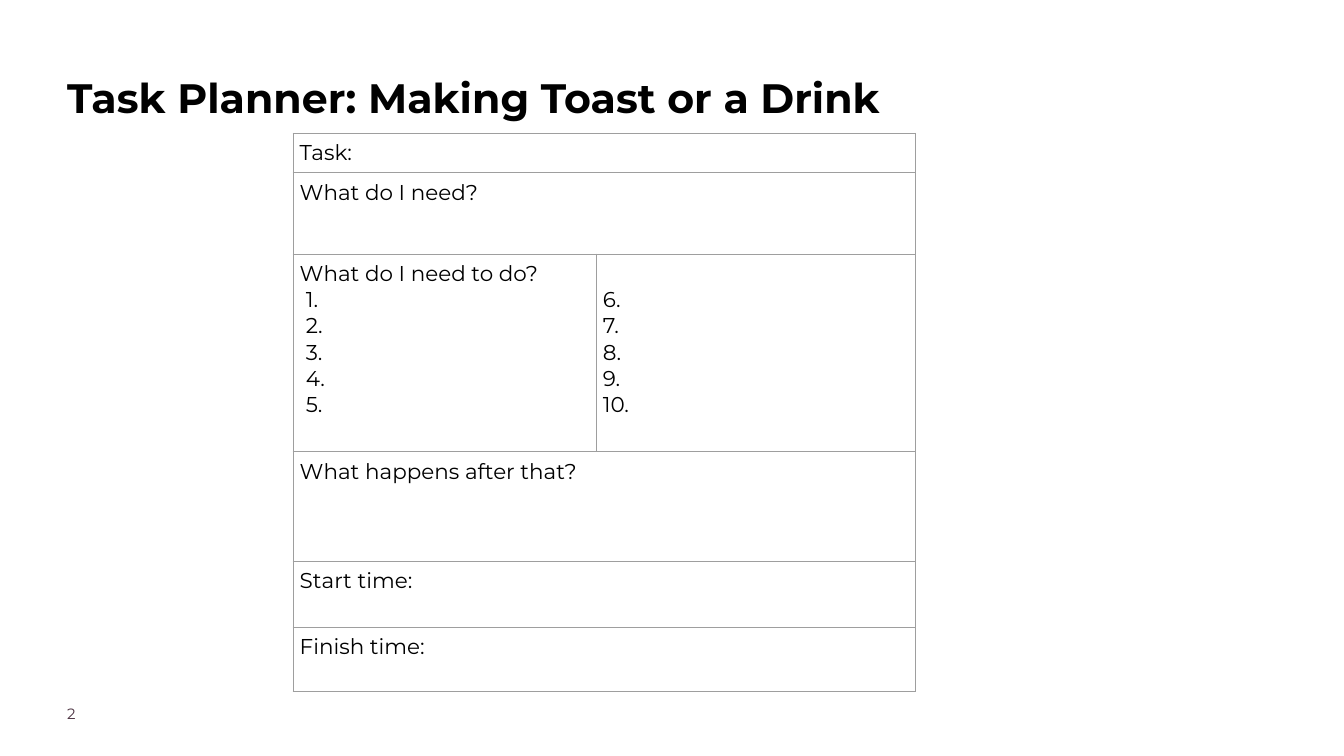
from lxml.etree import SubElement
from pptx import Presentation
from pptx.dml.color import RGBColor as RGB
from pptx.oxml import parse_xml
from pptx.oxml.ns import nsdecls, qn
from pptx.util import Inches as In, Pt

FONT = "Montserrat"
BLACK = RGB(0, 0, 0)
PLUM = RGB(0x4B, 0x32, 0x41)
GREY = RGB(0x9E, 0x9E, 0x9E)
W, H = 20, 11.25
MARGIN = W / 20
TABLE_LEFT, TABLE_TOP = 4.36, 1.98
COLS = [4.51, 4.75]
PAD, LINE, CELL_SIZE = 0.1, 0.39, 23

TITLE = "Task Planner: Making Toast or a Drink"
PAGE = "2"
ROWS = [
    (0.59, "Task:"),
    (1.21, "What do I need?"),
    (2.94, "What do I need to do?"),
    (1.63, "What happens after that?"),
    (0.98, "Start time:"),
    (0.96, "Finish time:"),
]
STEPS_ROW = 2
NUMBERED_STEPS = 5
MORE_STEPS = ["6.", "7.", "8.", "9.", "10."]


def add_run(p, text, size, color=BLACK, bold=False):
    r = p.add_run()
    r.text = text
    r.font.name, r.font.size, r.font.bold = FONT, Pt(size), bold
    r.font.color.rgb = color


def add_text(slide, box, text, size, color, bold=False, spacing=1.0):
    tf = slide.shapes.add_textbox(*map(In, box)).text_frame
    tf.word_wrap = True
    tf.margin_left = tf.margin_right = tf.margin_top = tf.margin_bottom = 0
    p = tf.paragraphs[0]
    p.line_spacing = spacing
    add_run(p, text, size, color, bold)


def style_cell(cell):
    cell.margin_left = cell.margin_right = In(PAD)
    cell.margin_top = cell.margin_bottom = In(PAD)
    cell.fill.background()
    tc_pr = cell._tc.get_or_add_tcPr()
    for i, side in enumerate(("lnL", "lnR", "lnT", "lnB")):
        tc_pr.insert(i, parse_xml(
            f'<a:{side} {nsdecls("a")} w="{Pt(0.75)}"><a:solidFill>'
            f'<a:srgbClr val="{GREY}"/></a:solidFill></a:{side}>'))


def add_numbered_step(tf):
    p = tf.add_paragraph()
    p_pr = p._p.get_or_add_pPr()
    p_pr.set("marL", str(In(0.5)))
    p_pr.set("indent", str(In(-0.41)))
    color = SubElement(p_pr, qn("a:buClr"))
    SubElement(color, qn("a:srgbClr"), val=str(BLACK))
    SubElement(p_pr, qn("a:buSzPts"), val=str(CELL_SIZE * 100))
    SubElement(p_pr, qn("a:buFont"), typeface=FONT)
    SubElement(p_pr, qn("a:buAutoNum"), type="arabicPeriod")
    add_run(p, " ", CELL_SIZE)


def add_planner(slide):
    heights = [height for height, _ in ROWS]
    table = slide.shapes.add_table(
        len(ROWS), len(COLS), In(TABLE_LEFT), In(TABLE_TOP),
        In(sum(COLS)), In(sum(heights))).table
    table.first_row = table.horz_banding = False
    for col, width in zip(table.columns, COLS):
        col.width = In(width)
    for i, (height, label) in enumerate(ROWS):
        table.rows[i].height = In(height)
        left, right = table.cell(i, 0), table.cell(i, 1)
        for cell in (left, right):
            style_cell(cell)
        if i != STEPS_ROW:
            left.merge(right)
        add_run(left.text_frame.paragraphs[0], label, CELL_SIZE)

    for _ in range(NUMBERED_STEPS):
        add_numbered_step(table.cell(STEPS_ROW, 0).text_frame)
    more = table.cell(STEPS_ROW, 1)
    more.margin_top = In(PAD + LINE)
    tf = more.text_frame
    for i, step in enumerate(MORE_STEPS):
        p = tf.add_paragraph() if i else tf.paragraphs[0]
        add_run(p, step, CELL_SIZE)


def main():
    prs = Presentation()
    prs.slide_width, prs.slide_height = In(W), In(H)
    slide = prs.slides.add_slide(prs.slide_layouts[6])
    add_text(slide, (MARGIN, 0.97, 14.44, 1.78), TITLE, 44, BLACK, True, 1.15)
    add_text(slide, (MARGIN, 10.48, 1.57, 0.39), PAGE, 16, PLUM)
    add_planner(slide)
    prs.save("out.pptx")


if __name__ == "__main__":
    main()
